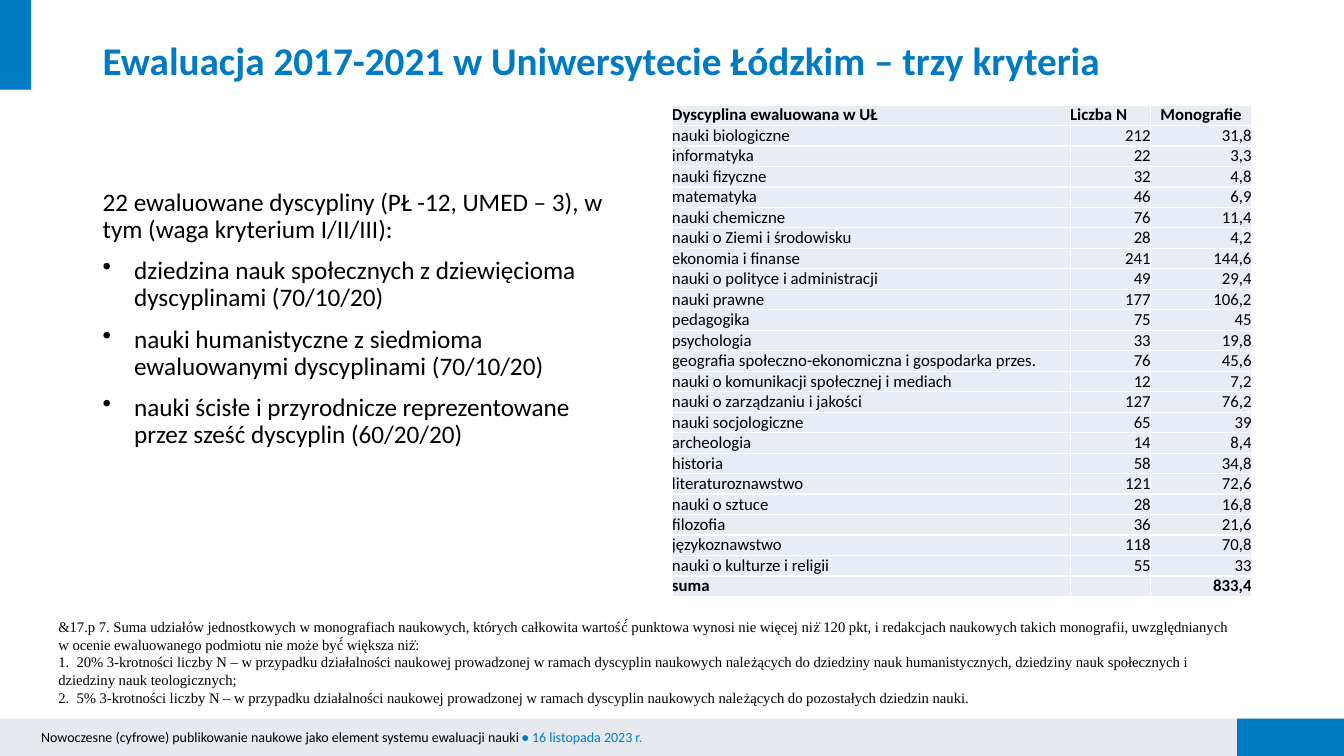
"""Builds a slide on the 2017-2021 evaluation with a discipline table."""
from lxml.etree import SubElement
from pptx import Presentation
from pptx.dml.color import RGBColor
from pptx.enum.shapes import MSO_SHAPE
from pptx.enum.text import MSO_ANCHOR, PP_ALIGN
from pptx.oxml.ns import qn
from pptx.util import Pt

COLORS = {"blue": "007AC3", "grey": "E6EAEF", "cell": "E7ECF5", "black": "000000"}
SLIDE_WIDTH, SLIDE_HEIGHT = 960, 540
FOOTER_HEIGHT = 26.6
FOOTER_TOP = SLIDE_HEIGHT - FOOTER_HEIGHT
CORNER_WIDTH = 76.3

BANDS = [
    ("grey", 0, FOOTER_TOP, SLIDE_WIDTH, FOOTER_HEIGHT),
    ("blue", 0, 0, 22.3, 64.1),
    ("blue", SLIDE_WIDTH - CORNER_WIDTH, FOOTER_TOP, CORNER_WIDTH, FOOTER_HEIGHT),
]
TITLE = "Ewaluacja 2017-2021 w Uniwersytecie Łódzkim – trzy kryteria"
FOOTER = [
    ("Nowoczesne (cyfrowe) publikowanie naukowe jako element systemu ewaluacji nauki ", "black", False),
    ("• ", "blue", True),
    ("16 listopada 2023 r.", "blue", False),
]
INTRO = "22 ewaluowane dyscypliny (PŁ -12, UMED – 3), w tym (waga kryterium I/II/III):"
FIELDS = [
    "dziedzina nauk społecznych z dziewięcioma dyscyplinami (70/10/20)",
    "nauki humanistyczne z siedmioma ewaluowanymi dyscyplinami (70/10/20)",
    "nauki ścisłe i przyrodnicze reprezentowane przez sześć dyscyplin (60/20/20)",
]
RULE = (
    "&17.p 7. Suma udziałów jednostkowych w monografiach naukowych, których całkowita "
    "wartość́ punktowa wynosi nie więcej niż̇ 120 pkt, i redakcjach naukowych takich "
    "monografii, uwzględnianych w ocenie ewaluowanego podmiotu nie może być́ większa niż̇:"
)
LIMITS = [
    "  20% 3-krotności liczby N – w przypadku działalności naukowej prowadzonej w ramach "
    "dyscyplin naukowych należących do dziedziny nauk humanistycznych, dziedziny nauk "
    "społecznych i dziedziny nauk teologicznych;",
    "  5% 3-krotności liczby N – w przypadku działalności naukowej prowadzonej w ramach "
    "dyscyplin naukowych należących do pozostałych dziedzin nauki.",
]
COLUMN_WIDTHS = [284.4, 57.6, 72]
ROW_HEIGHT = 14.64
ROWS = [
    ("Dyscyplina ewaluowana w UŁ", "Liczba N", "Monografie"),
    ("nauki biologiczne", "212", "31,8"),
    ("informatyka", "22", "3,3"),
    ("nauki fizyczne", "32", "4,8"),
    ("matematyka", "46", "6,9"),
    ("nauki chemiczne", "76", "11,4"),
    ("nauki o Ziemi i środowisku", "28", "4,2"),
    ("ekonomia i finanse", "241", "144,6"),
    ("nauki o polityce i administracji", "49", "29,4"),
    ("nauki prawne", "177", "106,2"),
    ("pedagogika", "75", "45"),
    ("psychologia", "33", "19,8"),
    ("geografia społeczno-ekonomiczna i gospodarka przes.", "76", "45,6"),
    ("nauki o komunikacji społecznej i mediach", "12", "7,2"),
    ("nauki o zarządzaniu i jakości", "127", "76,2"),
    ("nauki socjologiczne", "65", "39"),
    ("archeologia", "14", "8,4"),
    ("historia", "58", "34,8"),
    ("literaturoznawstwo", "121", "72,6"),
    ("nauki o sztuce", "28", "16,8"),
    ("filozofia", "36", "21,6"),
    ("językoznawstwo", "118", "70,8"),
    ("nauki o kulturze i religii", "55", "33"),
    ("suma", "", "833,4"),
]
HEADER_ALIGNS = [PP_ALIGN.LEFT, PP_ALIGN.LEFT, PP_ALIGN.CENTER]
VALUE_ALIGNS = [PP_ALIGN.LEFT, PP_ALIGN.RIGHT, PP_ALIGN.RIGHT]


def color(name):
    return RGBColor.from_string(COLORS[name])


def style(font, size, name="Calibri", tint="black", bold=False):
    font.size, font.name, font.bold = Pt(size), name, bold
    font.color.rgb = color(tint)


def add_band(page, tint, *place):
    band = page.shapes.add_shape(MSO_SHAPE.RECTANGLE, *map(Pt, place))
    band.shadow.inherit = False
    band.fill.solid()
    band.fill.fore_color.rgb = color(tint)
    band.line.fill.background()


def add_text(page, place, lines):
    box = page.shapes.add_textbox(*map(Pt, place))
    frame = box.text_frame
    frame.word_wrap = True
    frame.text = "\n".join(lines)
    return frame


def add_bullet(para, tag, indent, **attributes):
    properties = para._p.get_or_add_pPr()
    properties.set("marL", str(Pt(indent)))
    properties.set("indent", str(-Pt(indent)))
    bullet = SubElement(properties, qn(tag), **attributes)
    defaults = properties.find(qn("a:defRPr"))
    if defaults is not None:
        defaults.addprevious(bullet)


def add_title(page):
    frame = add_text(page, (66.2, 25.9, 893.8, 38.2), [TITLE])
    frame.vertical_anchor = MSO_ANCHOR.MIDDLE
    para = frame.paragraphs[0]
    para.line_spacing = 0.9
    style(para.font, 28, tint="blue", bold=True)


def add_body(page):
    frame = add_text(page, (66.2, 131.8, 380.9, 309.6), [INTRO, *FIELDS])
    for para in frame.paragraphs:
        para.line_spacing = 0.9
        para.space_before = Pt(10)
        style(para.font, 18)
    for para in frame.paragraphs[1:]:
        add_bullet(para, "a:buChar", 22.5, char="•")


def add_footnote(page):
    frame = add_text(page, (34.6, 437.8, 859.7, 83.5), [RULE, *LIMITS])
    for para in frame.paragraphs:
        style(para.font, 10.5, "Times New Roman")
    for para in frame.paragraphs[1:]:
        add_bullet(para, "a:buAutoNum", 0, type="arabicPeriod")


def add_footer(page):
    para = add_text(page, (22.3, 517, 671.8, 19.4), [""]).paragraphs[0]
    for text, tint, bold in FOOTER:
        span = para.add_run()
        span.text = text
        style(span.font, 10, tint=tint, bold=bold)


def add_disciplines(page):
    place = (480, 75, sum(COLUMN_WIDTHS), ROW_HEIGHT * len(ROWS))
    table = page.shapes.add_table(len(ROWS), len(COLUMN_WIDTHS), *map(Pt, place)).table
    table.first_row = table.horz_banding = False
    for column, width in zip(table.columns, COLUMN_WIDTHS):
        column.width = Pt(width)
    for index, (row, values) in enumerate(zip(table.rows, ROWS)):
        row.height = Pt(ROW_HEIGHT)
        aligns = VALUE_ALIGNS if index else HEADER_ALIGNS
        for cell, value, align in zip(row.cells, values, aligns):
            cell.fill.solid()
            cell.fill.fore_color.rgb = color("cell")
            cell.margin_left = cell.margin_right = cell.margin_top = cell.margin_bottom = 0
            cell.vertical_anchor = MSO_ANCHOR.BOTTOM
            cell.text = value
            para = cell.text_frame.paragraphs[0]
            para.alignment = align
            style(para.font, 12, bold=index in (0, len(ROWS) - 1))


def main():
    deck = Presentation()
    deck.slide_width, deck.slide_height = Pt(SLIDE_WIDTH), Pt(SLIDE_HEIGHT)
    page = deck.slides.add_slide(deck.slide_layouts[6])
    for band in BANDS:
        add_band(page, *band)
    add_footer(page)
    add_body(page)
    add_title(page)
    add_disciplines(page)
    add_footnote(page)
    deck.save("out.pptx")


if __name__ == "__main__":
    main()
